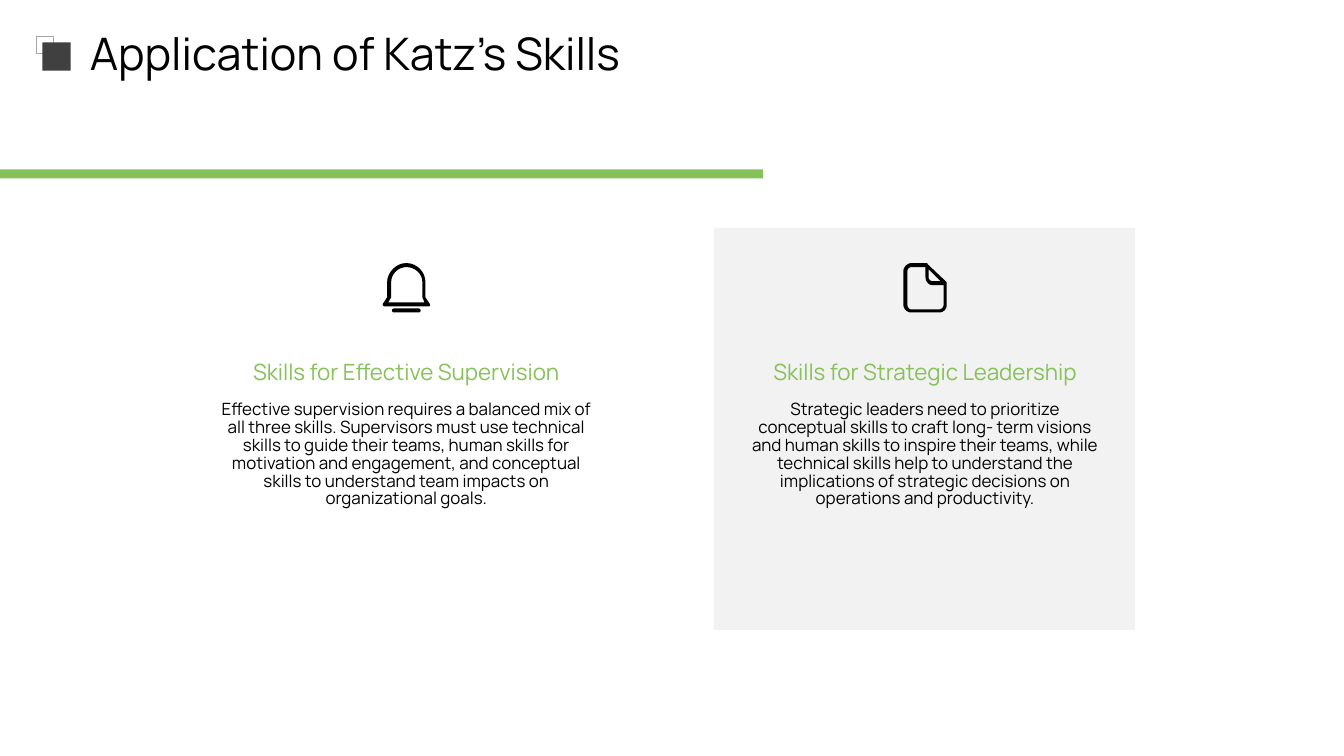
from pptx import Presentation
from pptx.dml.color import RGBColor
from pptx.enum.shapes import MSO_SHAPE
from pptx.enum.text import MSO_ANCHOR, MSO_AUTO_SIZE, PP_ALIGN
from pptx.util import Inches, Pt

RECT = MSO_SHAPE.RECTANGLE
LEFT, CENTER = PP_ALIGN.LEFT, PP_ALIGN.CENTER
TOP, MIDDLE, BOTTOM = MSO_ANCHOR.TOP, MSO_ANCHOR.MIDDLE, MSO_ANCHOR.BOTTOM

# Content
FONT = "Manrope"
GREEN, BLACK, DARK, GREY, PALE = "87C159", "000000", "404040", "A6A6A6", "F2F2F2"
TITLE = "Application of Katz’s Skills"

# Icon outlines: a pair is a point, six numbers are a Bézier curve
BELL = [
    [(3.91, 3.06), (4.15, 3.06), (4.18, 3.06, 4.18, 3.1, 4.15, 3.1),
     (3.91, 3.1), (3.88, 3.1, 3.88, 3.06, 3.91, 3.06)],
    [(4.03, 2.65), (3.95, 2.65, 3.88, 2.72, 3.88, 2.8), (3.88, 2.95),
     (3.85, 3), (4.21, 3), (4.19, 2.95), (4.19, 2.8),
     (4.19, 2.72, 4.12, 2.65, 4.03, 2.65)],
    [(4.03, 2.61), (4.14, 2.61, 4.22, 2.7, 4.22, 2.8), (4.22, 2.95),
     (4.26, 3.01), (4.27, 3.02, 4.27, 3.04, 4.25, 3.04), (3.82, 3.04),
     (3.8, 3.04, 3.79, 3.02, 3.8, 3.01), (3.84, 2.95), (3.84, 2.8),
     (3.84, 2.7, 3.93, 2.61, 4.03, 2.61)],
]
PAGE = [
    [(9.39, 2.81), (9.39, 2.8), (9.2, 2.62), (9.2, 2.61, 9.19, 2.61, 9.19, 2.61),
     (9.04, 2.61), (9, 2.61, 8.96, 2.65, 8.96, 2.69), (8.96, 3.02),
     (8.96, 3.07, 9, 3.1, 9.04, 3.1), (9.31, 3.1),
     (9.36, 3.1, 9.39, 3.07, 9.39, 3.02)],
    [(9.21, 2.75), (9.21, 2.67), (9.33, 2.79), (9.25, 2.79),
     (9.23, 2.79, 9.21, 2.77, 9.21, 2.75)],
    [(9.36, 3.02), (9.36, 3.05, 9.34, 3.07, 9.31, 3.07), (9.04, 3.07),
     (9.02, 3.07, 9, 3.05, 9, 3.02), (9, 2.69),
     (9, 2.67, 9.02, 2.65, 9.04, 2.65), (9.18, 2.65), (9.18, 2.75),
     (9.18, 2.79, 9.21, 2.83, 9.25, 2.83), (9.36, 2.83)],
]

# Left, width, heading, text, icon
COLUMNS = [
    (2.09, 3.88, "Skills for Effective Supervision",
     "Effective supervision requires a balanced mix of all three skills. "
     "Supervisors must use technical skills to guide their teams, human skills "
     "for motivation and engagement, and conceptual skills to understand team "
     "impacts on organizational goals.", BELL),
    (7.3, 3.75, "Skills for Strategic Leadership",
     "Strategic leaders need to prioritize conceptual skills to craft long- term "
     "visions and human skills to inspire their teams, while technical skills "
     "help to understand the implications of strategic decisions on operations "
     "and productivity.", PAGE),
]

# Left, top, width, height, fill, line
BLOCKS = [
    (0, 1.68, 7.57, 0.09, GREEN, None),
    (7.08, 2.26, 4.18, 3.99, PALE, None),
    (0.36, 0.36, 0.17, 0.17, None, GREY),
    (0.42, 0.42, 0.28, 0.28, DARK, None),
]


def rgb(value):
    return RGBColor.from_string(value)


def paint(sp, fill, line=None):
    sp.shadow.inherit = False
    for fmt, color in ((sp.fill, fill), (sp.line.fill, line)):
        if color:
            fmt.solid()
            fmt.fore_color.rgb = rgb(color)
        else:
            fmt.background()


def write(sp, box, text, size, color, anchor, align, inset=(0, 0), spacing=1.0):
    for name, value in zip(("left", "top", "width", "height"), box):
        setattr(sp, name, Inches(value))
    tf = sp.text_frame
    side, edge = (Inches(v) for v in inset)
    frame = {"word_wrap": True, "auto_size": MSO_AUTO_SIZE.NONE,
             "vertical_anchor": anchor, "margin_left": side, "margin_right": side,
             "margin_top": edge, "margin_bottom": edge}
    for name, value in frame.items():
        setattr(tf, name, value)
    p = tf.paragraphs[0]
    for name, value in {"alignment": align, "line_spacing": spacing,
                        "space_before": Pt(0)}.items():
        setattr(p, name, value)
    r = p.add_run()
    r.text = text
    for name, value in {"name": FONT, "size": Pt(size), "bold": False}.items():
        setattr(r.font, name, value)
    r.font.color.rgb = rgb(color)
    # No bullet or hanging indent
    p_pr = p._p.get_or_add_pPr()
    p_pr.set("marL", "0")
    p_pr.set("indent", "0")
    p_pr.append(p_pr.makeelement(
        "{http://schemas.openxmlformats.org/drawingml/2006/main}buNone", {}))


def flatten(contour, steps=8):
    points = [contour[0]]
    for seg in contour[1:]:
        if len(seg) == 2:
            points.append(seg)
            continue
        x0, y0 = points[-1]
        x1, y1, x2, y2, x3, y3 = seg
        for i in range(1, steps + 1):
            t = i / steps
            a, b, c, d = (1 - t) ** 3, 3 * t * (1 - t) ** 2, 3 * t * t * (1 - t), t ** 3
            points.append((a * x0 + b * x1 + c * x2 + d * x3,
                           a * y0 + b * y1 + c * y2 + d * y3))
    return [(x * 1000, y * 1000) for x, y in points]


def draw_icon(s, icon):
    outlines = [flatten(contour) for contour in icon]
    builder = s.shapes.build_freeform(*outlines[0][0], scale=Inches(1) / 1000)
    builder.add_line_segments(outlines[0][1:], close=True)
    for outline in outlines[1:]:
        builder.move_to(*outline[0])
        builder.add_line_segments(outline[1:], close=True)
    paint(builder.convert_to_shape(), BLACK)


prs = Presentation()
prs.slide_width, prs.slide_height = Inches(13.33), Inches(7.5)
s = prs.slides.add_slide(prs.slide_layouts[4])
holders = {ph.placeholder_format.idx: ph for ph in s.placeholders}

# Bar, card and title marker, placed behind the text
for i, (x, y, w, h, fill, line) in enumerate(BLOCKS):
    sp = s.shapes.add_shape(RECT, Inches(x), Inches(y), Inches(w), Inches(h))
    paint(sp, fill, line)
    if line:
        sp.line.width = Pt(1)
    s.shapes._spTree.insert(2 + i, sp._element)

# Title
write(holders[0], (0.89, 0.29, 11.9, 0.47), TITLE, 32, BLACK, MIDDLE, LEFT)

# Two columns: icon, heading, text
for i, (x, w, heading, text, icon) in enumerate(COLUMNS):
    write(holders[1 + 2 * i], (x, 3.27, w, 0.55), heading, 16, GREEN, BOTTOM, CENTER)
    write(holders[2 + 2 * i], (x, 3.93, w, 2.1), text, 12.1, BLACK, TOP, CENTER,
          inset=(0.1, 0.05), spacing=0.88)
    draw_icon(s, icon)

prs.save("out.pptx")
